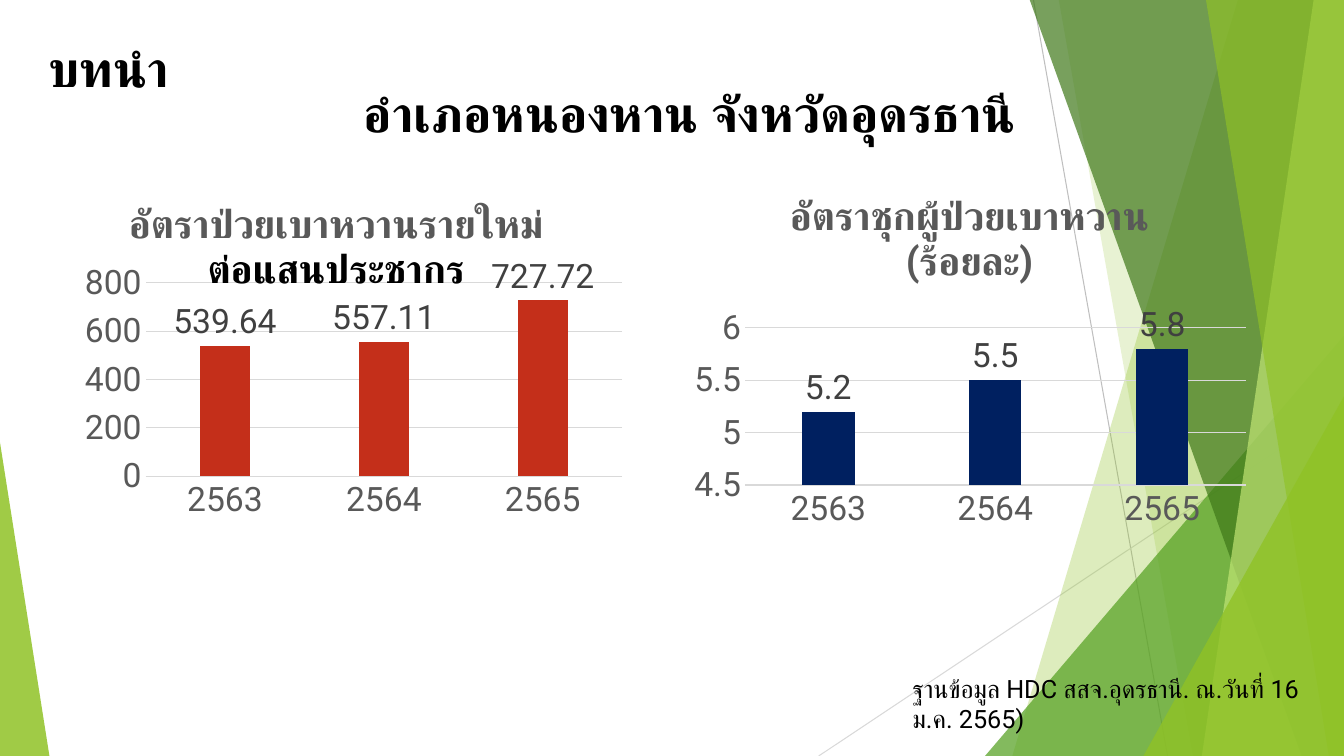
import pptx
import pptx.chart.data
import pptx.dml.color
import pptx.enum.chart
import pptx.enum.shapes
import pptx.enum.text
import pptx.oxml
import pptx.oxml.ns
import pptx.util
from pptx.util import Inches

FONT = "Roboto"
YEARS = ["2563", "2564", "2565"]
TOP, BOTTOM, RIGHT = -0.01, 7.5, 13.33


def color(hex_string):
    return pptx.dml.color.RGBColor.from_string(hex_string)


def xml(text):
    return pptx.oxml.parse_xml(text.replace("NS", pptx.oxml.ns.nsdecls("a", "c"), 1))


def format_font(font, size, hex_string, bold=False):
    font.name = FONT
    font.size = pptx.util.Pt(size)
    font.bold = bold
    font.color.rgb = color(hex_string)


def write_paragraph(paragraph, text, size=18, hex_string="000000", bold=False, align=None):
    run = paragraph.add_run()
    run.text = text
    format_font(run.font, size, hex_string, bold)
    run._r.rPr.append(xml(f'<a:cs NS typeface="{FONT}"/>'))
    paragraph.alignment = align


def write_frame(shape, text, **text_format):
    frame = shape.text_frame
    frame.word_wrap = True
    frame.vertical_anchor = pptx.enum.text.MSO_ANCHOR.TOP
    write_paragraph(frame.paragraphs[0], text, **text_format)


def place(shape, left, top, width, height):
    shape.left, shape.top = Inches(left), Inches(top)
    shape.width, shape.height = Inches(width), Inches(height)


def add_text(slide, box, text, **text_format):
    shape = slide.shapes.add_textbox(*map(Inches, box))
    write_frame(shape, text, **text_format)


def add_line(slide, start, end, hex_string):
    line = slide.shapes.add_connector(
        pptx.enum.shapes.MSO_CONNECTOR.STRAIGHT, *map(Inches, start + end))
    line.line.color.rgb = color(hex_string)
    line.line.width = pptx.util.Pt(0.75)
    line._element.spPr.append(xml("<a:effectLst NS/>"))


def add_facet(slide, points, hex_string, opacity):
    corners = [(Inches(x), Inches(y)) for x, y in points]
    builder = slide.shapes.build_freeform(*corners[0])
    builder.add_line_segments(corners[1:], close=True)
    shape = builder.convert_to_shape()
    shape.shadow.inherit = False
    shape.line.fill.background()
    shape.fill.solid()
    shape.fill.fore_color.rgb = color(hex_string)
    fill_color = shape._element.spPr.find(".//" + pptx.oxml.ns.qn("a:srgbClr"))
    fill_color.append(xml(f'<a:alpha NS val="{opacity * 1000}"/>'))


def add_band(slide, top_left, bottom_left, hex_string, opacity):
    points = [(top_left, TOP), (RIGHT, TOP), (RIGHT, BOTTOM), (bottom_left, BOTTOM)]
    add_facet(slide, points, hex_string, opacity)


def add_background(slide):
    add_line(slide, (10.25, 0), (11.58, BOTTOM), "BFBFBF")
    add_line(slide, (RIGHT, 4.03), (8.12, BOTTOM), "D9D9D9")
    add_band(slide, 12.28, 10.04, "90C226", 30)
    add_band(slide, 10.5, 11.83, "90C226", 20)
    add_facet(slide, [(RIGHT, 3.33), (RIGHT, BOTTOM), (9.77, BOTTOM)], "54A021", 72)
    add_band(slide, 10.21, 12.91, "3F7819", 70)
    add_band(slide, 13.03, 11.92, "C0E474", 70)
    add_band(slide, 11.96, 13.18, "90C226", 65)
    add_facet(slide, [(RIGHT, 3.93), (RIGHT, BOTTOM), (11.34, BOTTOM)], "90C226", 80)
    add_facet(slide, [(0, 4.39), (0.49, BOTTOM), (0, BOTTOM)], "90C226", 85)


def set_plot_layout(chart, fractions):
    plot_area = chart.element.find(".//" + pptx.oxml.ns.qn("c:plotArea"))
    for layout in plot_area.findall(pptx.oxml.ns.qn("c:layout")):
        plot_area.remove(layout)
    modes = '<c:layoutTarget val="inner"/><c:xMode val="edge"/><c:yMode val="edge"/>'
    sizes = "".join(f'<c:{name} val="{value}"/>' for name, value in zip("xywh", fractions))
    plot_area.insert(0, xml(
        f"<c:layout NS><c:manualLayout>{modes}{sizes}</c:manualLayout></c:layout>"))
    clear = "<c:spPr NS><a:noFill/><a:ln><a:noFill/></a:ln></c:spPr>"
    plot_area.append(xml(clear))
    chart.element.find(pptx.oxml.ns.qn("c:chart")).addnext(xml(clear))


def format_line(line_format):
    line_format.color.rgb = color("D9D9D9")
    line_format.width = pptx.util.Pt(0.75)


def add_column_chart(slide, box, values, title_lines, fill, scale, plot_fractions):
    data = pptx.chart.data.CategoryChartData()
    data.categories = YEARS
    data.add_series("Series 1", values)
    chart = slide.shapes.add_chart(
        pptx.enum.chart.XL_CHART_TYPE.COLUMN_CLUSTERED, *map(Inches, box), data).chart
    format_font(chart.font, 24, "000000")
    chart.has_legend = False
    chart.has_title = True
    frame = chart.chart_title.text_frame
    for index, (text, hex_string) in enumerate(title_lines):
        paragraph = frame.add_paragraph() if index else frame.paragraphs[0]
        write_paragraph(paragraph, text, size=28, hex_string=hex_string, bold=True)

    for axis in (chart.category_axis, chart.value_axis):
        axis.major_tick_mark = pptx.enum.chart.XL_TICK_MARK.NONE
        axis.minor_tick_mark = pptx.enum.chart.XL_TICK_MARK.NONE
        format_font(axis.tick_labels.font, 24, "595959")
    format_line(chart.category_axis.format.line)
    chart.value_axis.format.line.fill.background()
    format_line(chart.value_axis.major_gridlines.format.line)
    axis = chart.value_axis
    axis.minimum_scale, axis.maximum_scale, axis.major_unit = scale

    plot = chart.plots[0]
    plot.gap_width = 219
    plot.overlap = -27
    plot.vary_by_categories = False
    series = plot.series[0]
    series.format.fill.solid()
    series.format.fill.fore_color.rgb = color(fill)
    labels = series.data_labels
    labels.show_value = True
    labels.position = pptx.enum.chart.XL_LABEL_POSITION.OUTSIDE_END
    format_font(labels.font, 24, "404040")
    set_plot_layout(chart, plot_fractions)


def main():
    presentation = pptx.Presentation()
    presentation.slide_width = Inches(RIGHT)
    presentation.slide_height = Inches(BOTTOM)
    slide = presentation.slides.add_slide(presentation.slide_layouts[5])
    add_background(slide)

    title = slide.shapes.title
    place(title, 0.38, 0.32, 9.52, 0.74)
    write_frame(title, "บทนำ", size=36, bold=True, align=pptx.enum.text.PP_ALIGN.LEFT)

    add_column_chart(
        slide, (6.76, 1.76, 5.71, 3.55), (5.2, 5.5, 5.8),
        [("อัตราชุกผู้ป่วยเบาหวาน", "595959"), ("(ร้อยละ)", "595959")],
        "002060", (4.5, 6, 0.5), (0.11, 0.42, 0.87, 0.44))
    add_text(slide, (8.95, 6.63, 4.11, 0.7),
             "ฐานข้อมูล HDC สสจ.อุดรธานี. ณ.วันที่ 16 ม.ค. 2565)")
    add_column_chart(
        slide, (0.38, 1.83, 5.91, 3.76), (539.64, 557.11, 727.72),
        [("อัตราป่วยเบาหวานรายใหม่", "595959"), ("ต่อแสนประชากร", "000000")],
        "C42F1A", (0, 800, 200), (0.18, 0.26, 0.8, 0.51))
    add_text(slide, (2.08, 0.77, 9.52, 0.74), "อำเภอหนองหาน จังหวัดอุดรธานี",
             size=36, bold=True, align=pptx.enum.text.PP_ALIGN.CENTER)
    presentation.save("out.pptx")


if __name__ == "__main__":
    main()
